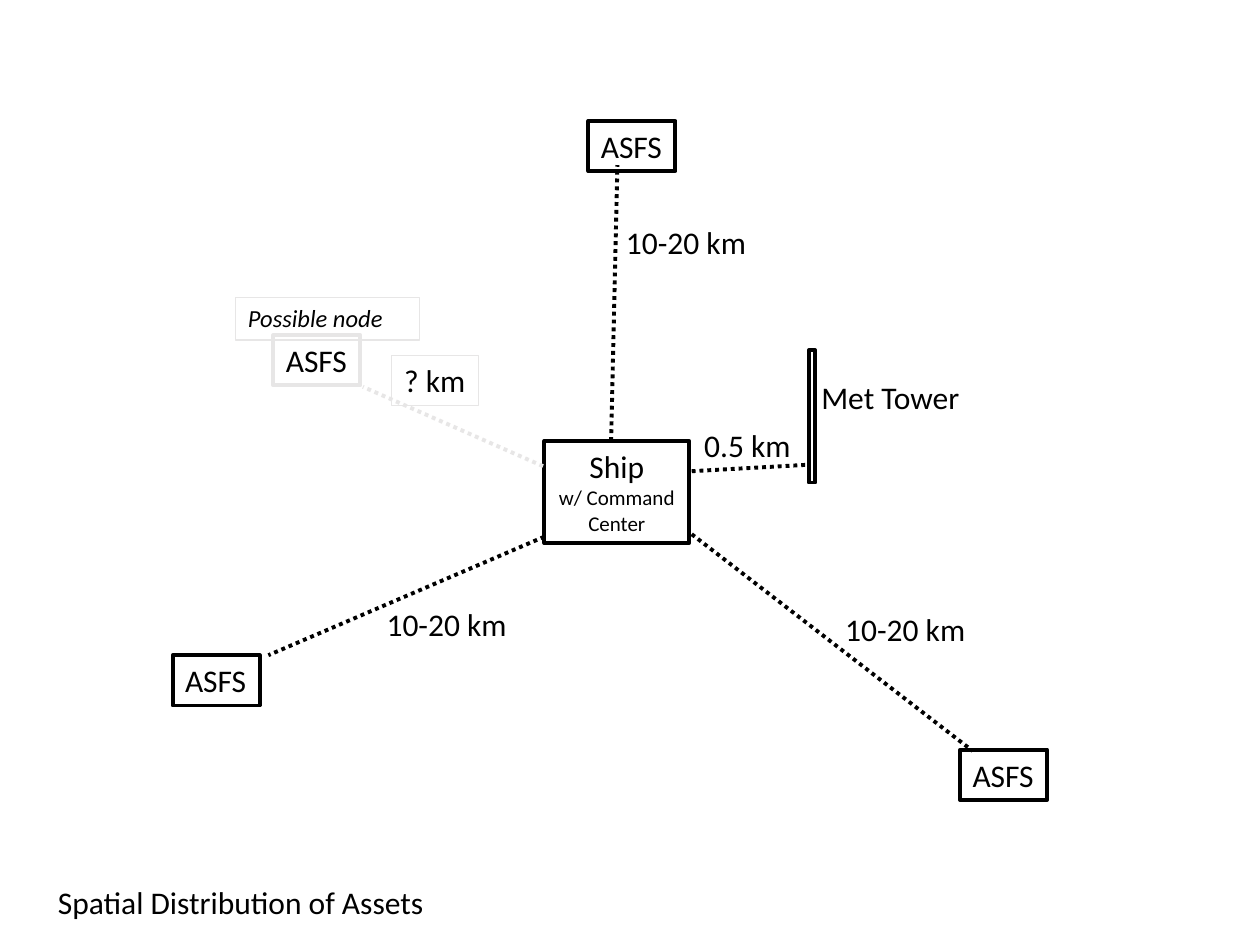
from dataclasses import dataclass

from lxml.etree import SubElement
from pptx import Presentation
from pptx.dml.color import RGBColor
from pptx.enum.dml import MSO_LINE
from pptx.enum.shapes import MSO_CONNECTOR, MSO_SHAPE
from pptx.enum.text import MSO_ANCHOR, MSO_AUTO_SIZE, PP_ALIGN
from pptx.oxml.ns import qn
from pptx.util import Emu, Pt

PX_PER_INCH = 100
EMU_PER_PX = 914400 // PX_PER_INCH
FONT = "Calibri"
BLACK = "000000"
PALE = "E7E6E6"
HEAVY = 2.25
THIN = 0.75


@dataclass(frozen=True)
class Label:
    text: str
    left: int
    top: int
    width: int
    height: int = 40
    outline: str | None = None
    weight: float = HEAVY
    size: int = 18
    italic: bool = False
    wrap: bool = False
    align: PP_ALIGN = PP_ALIGN.LEFT
    detail: str = ""
    detail_size: int = 12


@dataclass(frozen=True)
class Link:
    start: tuple[int, int]
    end: tuple[int, int]
    color: str = BLACK


def px(length: int) -> Emu:
    return Emu(length * EMU_PER_PX)


def rgb(value: str) -> RGBColor:
    return RGBColor.from_string(value)


def set_line(shape, color: str, weight: float) -> None:
    shape.line.color.rgb = rgb(color)
    shape.line.width = Pt(weight)


def add_span(para, text: str, size: int, italic: bool = False) -> None:
    span = para.add_run()
    span.text = text
    span.font.name = FONT
    span.font.size = Pt(size)
    span.font.italic = italic
    span.font.color.rgb = rgb(BLACK)


def fill_text(box, label: Label) -> None:
    frame = box.text_frame
    frame.word_wrap = label.wrap
    frame.auto_size = MSO_AUTO_SIZE.SHAPE_TO_FIT_TEXT
    frame.vertical_anchor = MSO_ANCHOR.TOP
    para = frame.paragraphs[0]
    para.alignment = label.align
    add_span(para, label.text, label.size, label.italic)
    if label.detail:
        para = frame.add_paragraph()
        para.alignment = label.align
        add_span(para, label.detail, label.detail_size)


def add_label(page, label: Label) -> None:
    box = page.shapes.add_textbox(
        px(label.left), px(label.top), px(label.width), px(label.height)
    )
    fill_text(box, label)
    if label.outline:
        set_line(box, label.outline, label.weight)


def add_link(page, link: Link) -> None:
    connector = page.shapes.add_connector(
        MSO_CONNECTOR.STRAIGHT, *map(px, link.start + link.end)
    )
    set_line(connector, link.color, HEAVY)
    connector.line.dash_style = MSO_LINE.ROUND_DOT
    SubElement(connector._element.spPr, qn("a:effectLst"))


def add_tower(page) -> None:
    tower = page.shapes.add_shape(
        MSO_SHAPE.RECTANGLE, px(642), px(278), px(5), px(105)
    )
    tower.fill.background()
    tower.shadow.inherit = False
    set_line(tower, BLACK, HEAVY)


def set_title(page, label: Label) -> None:
    title = page.shapes.title
    title.left, title.top = px(label.left), px(label.top)
    title.width, title.height = px(label.width), px(label.height)
    fill_text(title, label)


TITLE = Label("Spatial Distribution of Assets", 36, 696, 624, wrap=True)
SHIP = Label("Ship", 432, 350, 115, 81, BLACK, wrap=True,
             align=PP_ALIGN.CENTER, detail="w/ Command Center")
STATIONS = [
    Label("ASFS", left, top, 69, outline=color)
    for left, top, color in [
        (467, 96, BLACK), (217, 266, PALE), (762, 595, BLACK), (137, 520, BLACK)
    ]
]
LINKS = [
    Link((432, 426), (213, 520)),
    Link((549, 424), (772, 596)),
    Link((485, 350), (490, 131)),
    Link((639, 369), (549, 374)),
    Link((431, 370), (288, 307), PALE),
]
DISTANCES = [
    Label("10-20 km", left, top, 116)
    for left, top in [(487, 172), (297, 475), (661, 479)]
]
NOTES = [
    Label("Met Tower", 642, 295, 131),
    Label("0.5 km", 549, 333, 89),
    Label("? km", 311, 282, 69, outline=PALE, weight=THIN),
    Label("Possible node", 187, 236, 146, 34, PALE, THIN, 14, True, True),
]


def main() -> None:
    deck = Presentation()
    deck.slide_width, deck.slide_height = px(1000), px(750)
    page = deck.slides.add_slide(deck.slide_layouts[5])
    set_title(page, TITLE)
    add_tower(page)
    for label in [SHIP, *STATIONS]:
        add_label(page, label)
    for link in LINKS:
        add_link(page, link)
    for label in DISTANCES + NOTES:
        add_label(page, label)
    deck.save("out.pptx")


if __name__ == "__main__":
    main()
